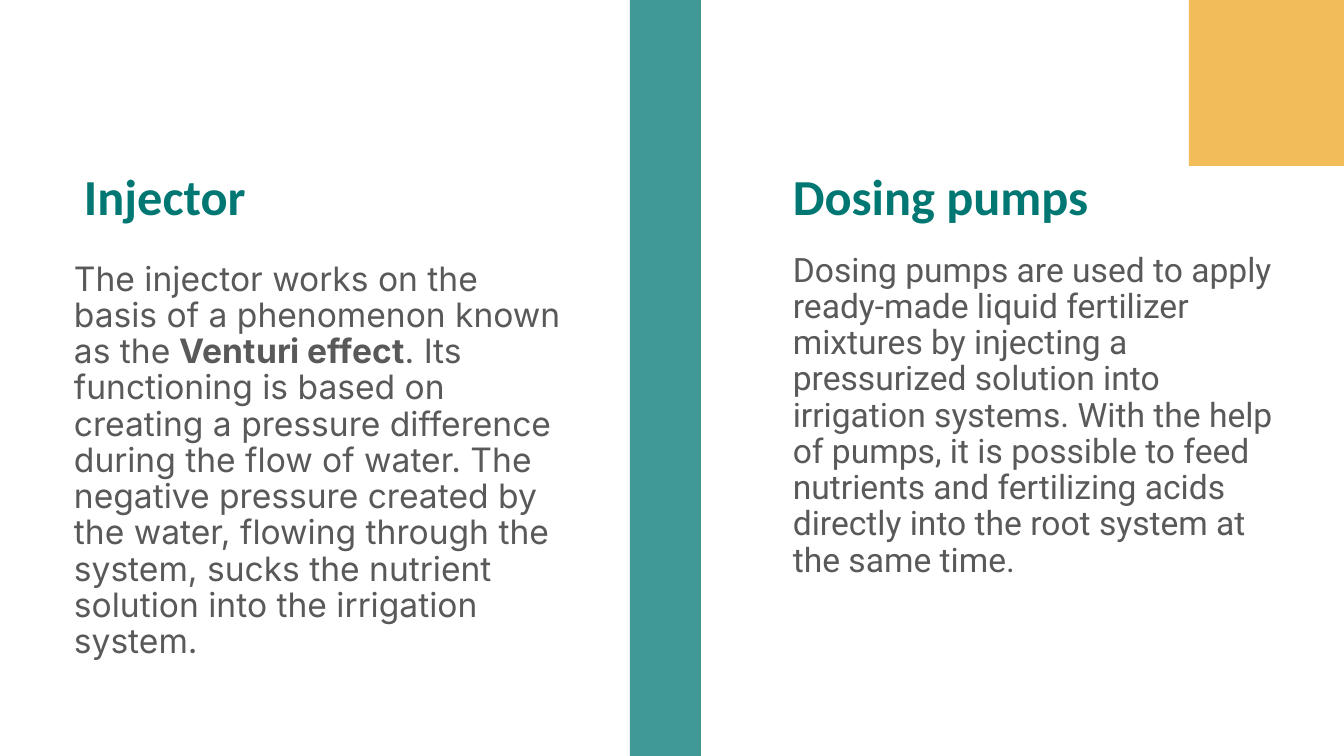
from dataclasses import dataclass

from lxml import etree
from pptx import Presentation
from pptx.dml.color import RGBColor
from pptx.enum.shapes import MSO_SHAPE
from pptx.enum.text import MSO_ANCHOR, PP_ALIGN
from pptx.oxml.ns import qn
from pptx.util import Pt

RECT = MSO_SHAPE.RECTANGLE
TOP = MSO_ANCHOR.TOP
LEFT = PP_ALIGN.LEFT
EMU_PER_PX = 914400 / 100.8
SLIDE_W, SLIDE_H = 1344, 756


@dataclass(frozen=True)
class Theme:
    """Colours, fonts and type sizes of the slide."""
    teal: str = "007772"
    amber: str = "EEA821"
    grey: str = "595959"
    heading_font: str = "Calibri"
    injector_font: str = "Inter"
    pumps_font: str = "Roboto"
    heading_size: int = 36
    body_size: int = 24
    opacity: int = 75


THEME = Theme()

INJECTOR = [
    ("The injector works on the basis of a phenomenon known as the ", False),
    ("Venturi effect", True),
    (". Its functioning is based on creating a pressure difference during the "
     "flow of water. The negative pressure created by the water, flowing "
     "through the system, sucks the nutrient solution into the irrigation "
     "system.", False),
]
PUMPS = [
    ("Dosing pumps are used to apply ready-made liquid fertilizer mixtures by "
     "injecting a pressurized solution into irrigation systems. With the help "
     "of pumps, it is possible to feed nutrients and fertilizing acids "
     "directly into the root system at the same time.", False),
]


def px(n):
    """Turn pixels into EMU."""
    return round(n * EMU_PER_PX)


def add_text(slide, box, runs, *, font, size, color):
    """Add a wrapped text box holding one paragraph of (text, bold) runs."""
    sp = slide.shapes.add_textbox(*map(px, box))
    tf = sp.text_frame
    tf.word_wrap = True
    tf.vertical_anchor = TOP
    p = tf.paragraphs[0]
    p.alignment = LEFT
    p.line_spacing = 0.9
    for text, bold in runs:
        r = p.add_run()
        r.text = text
        r.font.name = font
        r.font.size = Pt(size)
        r.font.bold = bold
        r.font.color.rgb = RGBColor.from_string(color)


def add_block(slide, box, color):
    """Add a translucent rectangle without an outline."""
    sp = slide.shapes.add_shape(RECT, *map(px, box))
    sp.shadow.inherit = False
    sp.line.fill.background()
    sp.fill.solid()
    sp.fill.fore_color.rgb = RGBColor.from_string(color)
    clr = sp.fill._xPr.find(qn("a:solidFill"))[0]
    etree.SubElement(clr, qn("a:alpha")).set("val", str(THEME.opacity * 1000))


def add_column(slide, box, heading, body, *, font, indent=0, gap=4):
    """Place a heading at the top of the box and its body text below."""
    x, y, w, h = box
    heading_h = 77
    body_y = y + heading_h + gap
    add_text(slide, (x + indent, y, w - indent, heading_h), [(heading, True)],
             font=THEME.heading_font, size=THEME.heading_size,
             color=THEME.teal)
    add_text(slide, (x, body_y, w, y + h - body_y), body,
             font=font, size=THEME.body_size, color=THEME.grey)


def add_decoration(slide, box):
    """Place the dividing band and the corner block within the box."""
    x, y, w, h = box
    corner_w, corner_h = 155, 166
    add_block(slide, (x + 630, y, 71, h), THEME.teal)
    add_block(slide, (x + w - corner_w, y, corner_w, corner_h), THEME.amber)


def main():
    """Build the slide and save it."""
    prs = Presentation()
    prs.slide_width, prs.slide_height = px(SLIDE_W), px(SLIDE_H)
    slide = prs.slides.add_slide(prs.slide_layouts[6])
    add_decoration(slide, (0, 0, SLIDE_W, SLIDE_H))
    add_column(slide, (64, 167, 510, 496), "Injector", INJECTOR,
               font=THEME.injector_font, indent=10, gap=13)
    add_column(slide, (783, 167, 509, 487), "Dosing pumps", PUMPS,
               font=THEME.pumps_font)
    prs.save("out.pptx")


if __name__ == "__main__":
    main()
